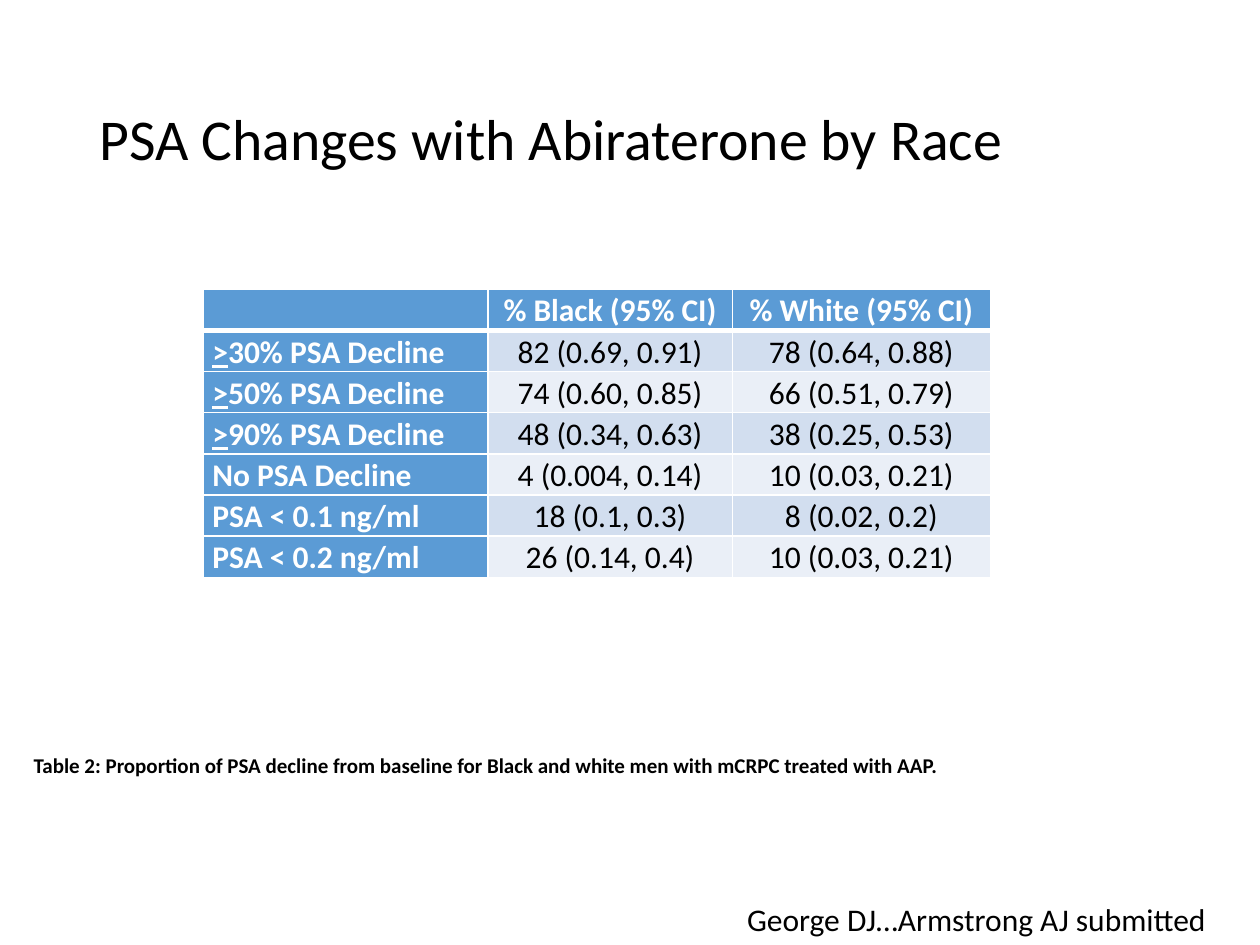
from lxml import etree
from pptx import Presentation
from pptx.dml.color import RGBColor
from pptx.enum.text import MSO_ANCHOR as ANCHOR, MSO_AUTO_SIZE as AUTO_SIZE, PP_ALIGN as ALIGN
from pptx.oxml.ns import qn
from pptx.util import Pt

BLACK = RGBColor(0x00, 0x00, 0x00)
WHITE = RGBColor(0xFF, 0xFF, 0xFF)
BLUE = RGBColor(0x5B, 0x9B, 0xD5)
BAND_COLORS = [RGBColor(0xD2, 0xDE, 0xEF), RGBColor(0xEA, 0xEF, 0xF7)]


def add_text(paragraph, text, size=18, color=BLACK, bold=False, underline=False,
             align=ALIGN.LEFT, line_spacing=1.0, space_after=0):
    paragraph.alignment = align
    paragraph.line_spacing = line_spacing
    paragraph.space_before = Pt(0)
    paragraph.space_after = Pt(space_after)
    run = paragraph.add_run()
    run.text = text
    run.font.name = "Calibri"
    run.font.size = Pt(size)
    run.font.color.rgb = color
    run.font.bold = bold
    run.font.underline = underline


def set_border(cell, side, width):
    properties = cell._tc.get_or_add_tcPr()
    line = etree.Element(qn(f"a:ln{side}"), w=str(Pt(width)))
    fill = etree.SubElement(line, qn("a:solidFill"))
    etree.SubElement(fill, qn("a:srgbClr"), val=str(WHITE))
    # Border lines come before the cell fill
    properties.insert(len(properties.findall("*")) - 1, line)


presentation = Presentation()
presentation.slide_width = Pt(720)
presentation.slide_height = Pt(540)
slide = presentation.slides.add_slide(presentation.slide_layouts[5])

# Title
title = slide.shapes.title
title.left, title.top, title.width, title.height = Pt(49.5), Pt(28.8), Pt(621), Pt(104.4)
title.text_frame.auto_size = AUTO_SIZE.NONE
title.text_frame.vertical_anchor = ANCHOR.MIDDLE
add_text(title.text_frame.paragraphs[0], "PSA Changes with Abiraterone by Race",
         size=33, line_spacing=0.9)

# Table of PSA changes; labels starting with ">" have that sign underlined
rows = [
    ["", "% Black (95% CI)", "% White (95% CI)"],
    [">30% PSA Decline", "82 (0.69, 0.91)", "78 (0.64, 0.88)"],
    [">50% PSA Decline", "74 (0.60, 0.85)", "66 (0.51, 0.79)"],
    [">90% PSA Decline", "48 (0.34, 0.63)", "38 (0.25, 0.53)"],
    ["No PSA Decline", "4 (0.004, 0.14)", "10 (0.03, 0.21)"],
    ["PSA < 0.1 ng/ml", "18 (0.1, 0.3)", "8 (0.02, 0.2)"],
    ["PSA < 0.2 ng/ml", "26 (0.14, 0.4)", "10 (0.03, 0.21)"],
]
column_widths = [162.8, 139.7, 147.5]
row_height = 23.4
table = slide.shapes.add_table(
    len(rows), len(column_widths), Pt(116), Pt(165.2),
    Pt(sum(column_widths)), Pt(row_height * len(rows))).table
for column, width in zip(table.columns, column_widths):
    column.width = Pt(width)

for row_index, values in enumerate(rows):
    table.rows[row_index].height = Pt(row_height)
    for column_index, text in enumerate(values):
        cell = table.cell(row_index, column_index)
        is_heading = row_index == 0 or column_index == 0
        cell.margin_left = cell.margin_right = Pt(5.4)
        cell.margin_top = cell.margin_bottom = 0
        cell.vertical_anchor = ANCHOR.MIDDLE if column_index else ANCHOR.BOTTOM
        cell.fill.solid()
        cell.fill.fore_color.rgb = BLUE if is_heading else BAND_COLORS[(row_index - 1) % 2]
        for side in "LRTB":
            under_header = (row_index, side) in [(0, "B"), (1, "T")]
            set_border(cell, side, 3 if under_header else 1)

        text_format = dict(color=WHITE if is_heading else BLACK, bold=is_heading,
                           align=ALIGN.CENTER if column_index else ALIGN.LEFT,
                           line_spacing=1.07, space_after=8)
        paragraph = cell.text_frame.paragraphs[0]
        if text.startswith(">"):
            add_text(paragraph, ">", underline=True, **text_format)
            text = text[1:]
        if text:
            add_text(paragraph, text, **text_format)

# Caption and citation
caption = slide.shapes.add_textbox(Pt(12.2), Pt(429.8), Pt(720), Pt(36)).text_frame
caption.word_wrap = True
caption.margin_top = 0
add_text(caption.paragraphs[0],
         "Table 2: Proportion of PSA decline from baseline for Black and white men "
         "with mCRPC treated with AAP.", size=12, bold=True)

citation = slide.shapes.add_textbox(Pt(419.8), Pt(510.5), Pt(293.8), Pt(29)).text_frame
citation.word_wrap = True
add_text(citation.paragraphs[0], "George DJ…Armstrong AJ submitted")

presentation.save("out.pptx")
